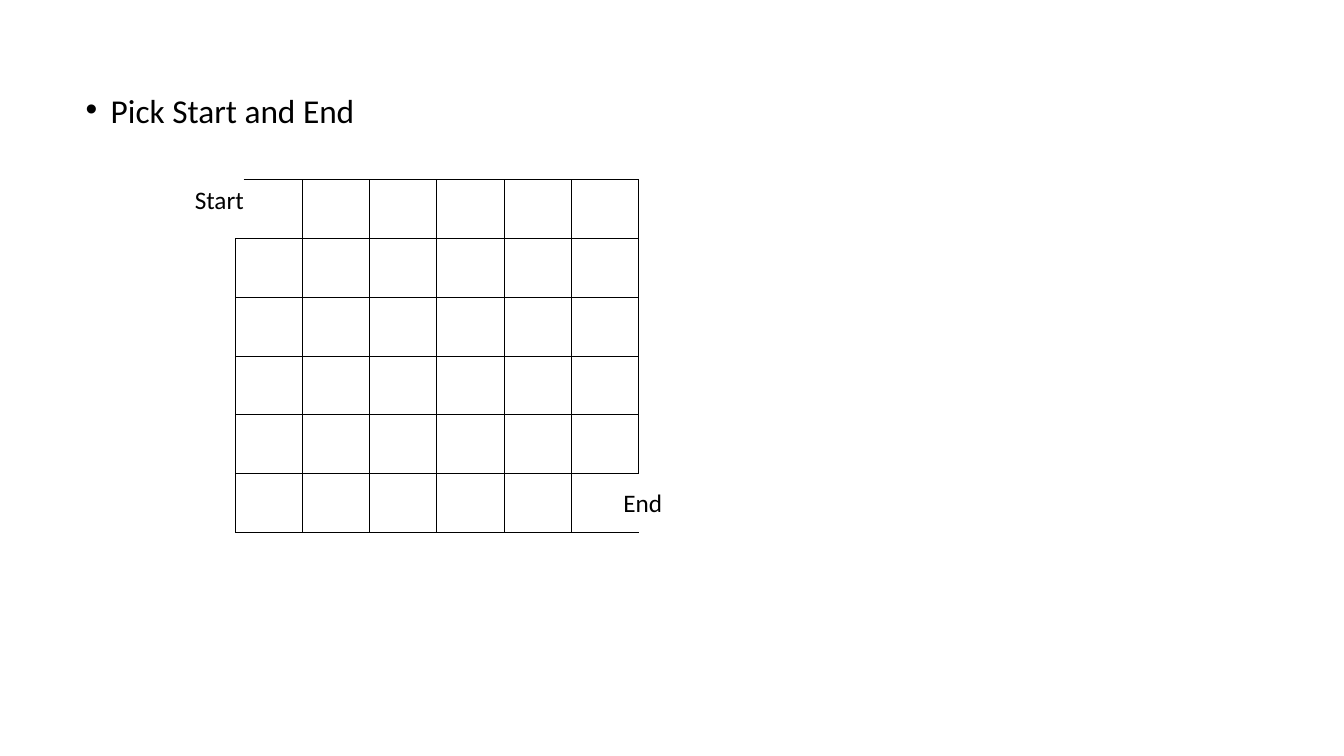
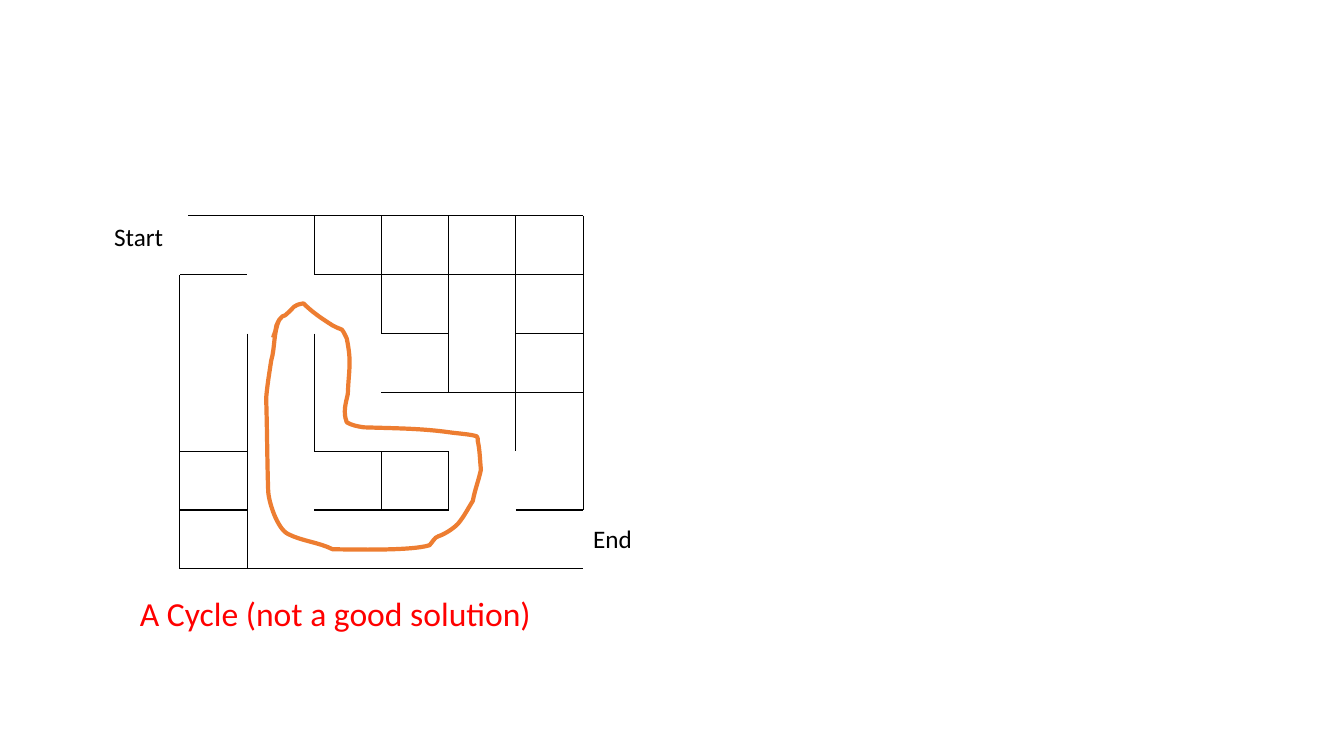
from pptx import Presentation
from pptx.dml.color import RGBColor
from pptx.enum.shapes import MSO_CONNECTOR as Connector
from pptx.enum.text import MSO_ANCHOR as Anchor
from pptx.oxml.ns import qn
from pptx.util import Inches, Pt
from lxml.etree import SubElement

COLORS = {"ink": "000000", "alert": "FF0000", "loop": "ED7D31"}
FONT = "Calibri"
CELL_WIDTH, CELL_HEIGHT = 2 / 3, 7 / 12
SIZE = 6
ENTRY_SHIFT = 1 / 12

# Each row marks its cells: "#" is a wall, "." is an opening.
FULL_TOPS = [".#####"] + ["######"] * 5
FULL_RIGHTS = ["######"] * 5 + ["#####."]
MAZE_TOPS = [".#####", "#.####", "...#.#", "...###", "#.##..", "#.##.#"]
MAZE_RIGHTS = [".#####", "..####", "##.###", "##..##", "#.##.#", "#....."]

LOOP_START = (2.77, 3.17)
# Two control points and the end point of each curve.
LOOP_CURVES = [
    (2.71, 3.31), (2.73, 3.44), (2.69, 3.58),
    (2.67, 3.71), (2.65, 3.83), (2.64, 3.95),
    (2.65, 4.26), (2.65, 4.56), (2.66, 4.86),
    (2.66, 4.97), (2.75, 5.25), (2.86, 5.3),
    (3, 5.37), (3.16, 5.38), (3.3, 5.45),
    (3.44, 5.45), (4.07, 5.47), (4.26, 5.41),
    (4.29, 5.38), (4.31, 5.33), (4.35, 5.32),
    (4.41, 5.3), (4.49, 5.25), (4.54, 5.2),
    (4.6, 5.13), (4.64, 5.05), (4.69, 4.97),
    (4.71, 4.86), (4.75, 4.76), (4.77, 4.66),
    (4.76, 4.56), (4.76, 4.47), (4.74, 4.38),
    (4.74, 4.36), (4.74, 4.34), (4.73, 4.33),
    (4.68, 4.31), (4.53, 4.3), (4.46, 4.29),
    (4.18, 4.25), (3.91, 4.25), (3.61, 4.24),
    (3.54, 4.23), (3.49, 4.22), (3.44, 4.19),
    (3.4, 4.09), (3.43, 4), (3.45, 3.91),
    (3.46, 3.65), (3.49, 3.61), (3.44, 3.36),
    (3.43, 3.34), (3.41, 3.29), (3.39, 3.27),
    (3.37, 3.26), (3.33, 3.25), (3.3, 3.23),
    (3.19, 3.16), (3.1, 3.1), (3.01, 3.01),
    (2.9, 3.03), (2.92, 3.05), (2.85, 3.11),
    (2.84, 3.13), (2.82, 3.13), (2.8, 3.14),
    (2.79, 3.15), (2.77, 3.17), (2.76, 3.19),
    (2.73, 3.26), (2.75, 3.2), (2.73, 3.29),
    (2.72, 3.31), (2.71, 3.35), (2.71, 3.35),
]


class MazeDeck:
    def __init__(self):
        self.deck = Presentation()
        self.deck.slide_width, self.deck.slide_height = Inches(13.33), Inches(7.5)
        self.page = None

    def add_page(self):
        self.page = self.deck.slides.add_slide(self.deck.slide_layouts[6])

    def text(self, words, left, top, width, height, size=18, color="ink",
             spacing=None, anchor=Anchor.TOP, bullet=False, wrap=True):
        box = self.page.shapes.add_textbox(
            Inches(left), Inches(top), Inches(width), Inches(height))
        frame = box.text_frame
        frame.word_wrap = wrap
        frame.vertical_anchor = anchor
        para = frame.paragraphs[0]
        para.text = words
        if spacing:
            para.line_spacing = spacing
        if bullet:
            properties = para._p.get_or_add_pPr()
            properties.set("marL", str(Inches(0.25)))
            properties.set("indent", str(-Inches(0.25)))
            SubElement(properties, qn("a:buFont"), typeface="Arial")
            SubElement(properties, qn("a:buChar"), char="•")
        para.font.name = FONT
        para.font.size = Pt(size)
        para.font.color.rgb = RGBColor.from_string(COLORS[color])

    def wall(self, x1, y1, x2, y2):
        line = self.page.shapes.add_connector(
            Connector.STRAIGHT, Inches(x1), Inches(y1), Inches(x2), Inches(y2))
        line.line.color.rgb = RGBColor.from_string(COLORS["ink"])
        line.line.width = Pt(0.75)
        SubElement(line._element.spPr, qn("a:effectLst"))

    def maze(self, left, top, tops, rights, start_offset, end_offset):
        """Draw the walls above and right of each cell, the border and the labels."""
        bottom = top + SIZE * CELL_HEIGHT
        exit_left = left + (SIZE - 1) * CELL_WIDTH
        for row in range(SIZE):
            y1 = top + row * CELL_HEIGHT
            y2 = y1 + CELL_HEIGHT
            for column in range(SIZE):
                x1 = left + column * CELL_WIDTH
                x2 = x1 + CELL_WIDTH
                if tops[row][column] == "#":
                    self.wall(x1, y1, x2, y1)
                if rights[row][column] == "#":
                    self.wall(x2, y1, x2, y2)
        self.wall(exit_left, bottom, left, bottom)
        self.wall(left, bottom, left, top + CELL_HEIGHT)
        self.text("Start", left + start_offset, top, 0.79, 0.43, wrap=False)
        self.text("End", left + end_offset, top + 3, 0.7, 0.43, wrap=False)
        entry = left + ENTRY_SHIFT
        self.wall(entry, top, entry + CELL_WIDTH, top)
        self.wall(exit_left, bottom, exit_left + CELL_WIDTH, bottom)

    def loop(self, start, points):
        """Draw an open outline of cubic curves, three points to a curve."""
        builder = self.page.shapes.build_freeform(*map(Inches, start))
        builder.add_line_segments(
            [(Inches(x), Inches(y)) for x, y in points], close=False)
        outline = builder.convert_to_shape()
        segments = list(outline._element.iter(qn("a:lnTo")))
        for first in range(0, len(segments), 3):
            triple = segments[first:first + 3]
            curve = SubElement(triple[0].getparent(), qn("a:cubicBezTo"))
            for segment in triple:
                curve.append(segment[0])
                segment.getparent().remove(segment)
        outline.shadow.inherit = False
        outline.fill.background()
        outline.line.color.rgb = RGBColor.from_string(COLORS["loop"])
        outline.line.width = Pt(3)


def main():
    show = MazeDeck()

    show.add_page()
    show.text("Pick Start and End", 0.75, 0.95, 8.5, 0.42,
              size=23.8, spacing=0.7, bullet=True)
    show.maze(7 / 3, 107 / 60, FULL_TOPS, FULL_RIGHTS,
              start_offset=-0.5, end_offset=3.75)

    show.add_page()
    show.maze(107 / 60, 15 / 7, MAZE_TOPS, MAZE_RIGHTS,
              start_offset=-0.75, end_offset=4)
    show.loop(LOOP_START, LOOP_CURVES)
    show.text("A Cycle (not a good solution)", 1.29, 5.82, 4.5, 0.58,
              size=24, color="alert", spacing=0.9, anchor=Anchor.MIDDLE)

    show.deck.save("out.pptx")


if __name__ == "__main__":
    main()
